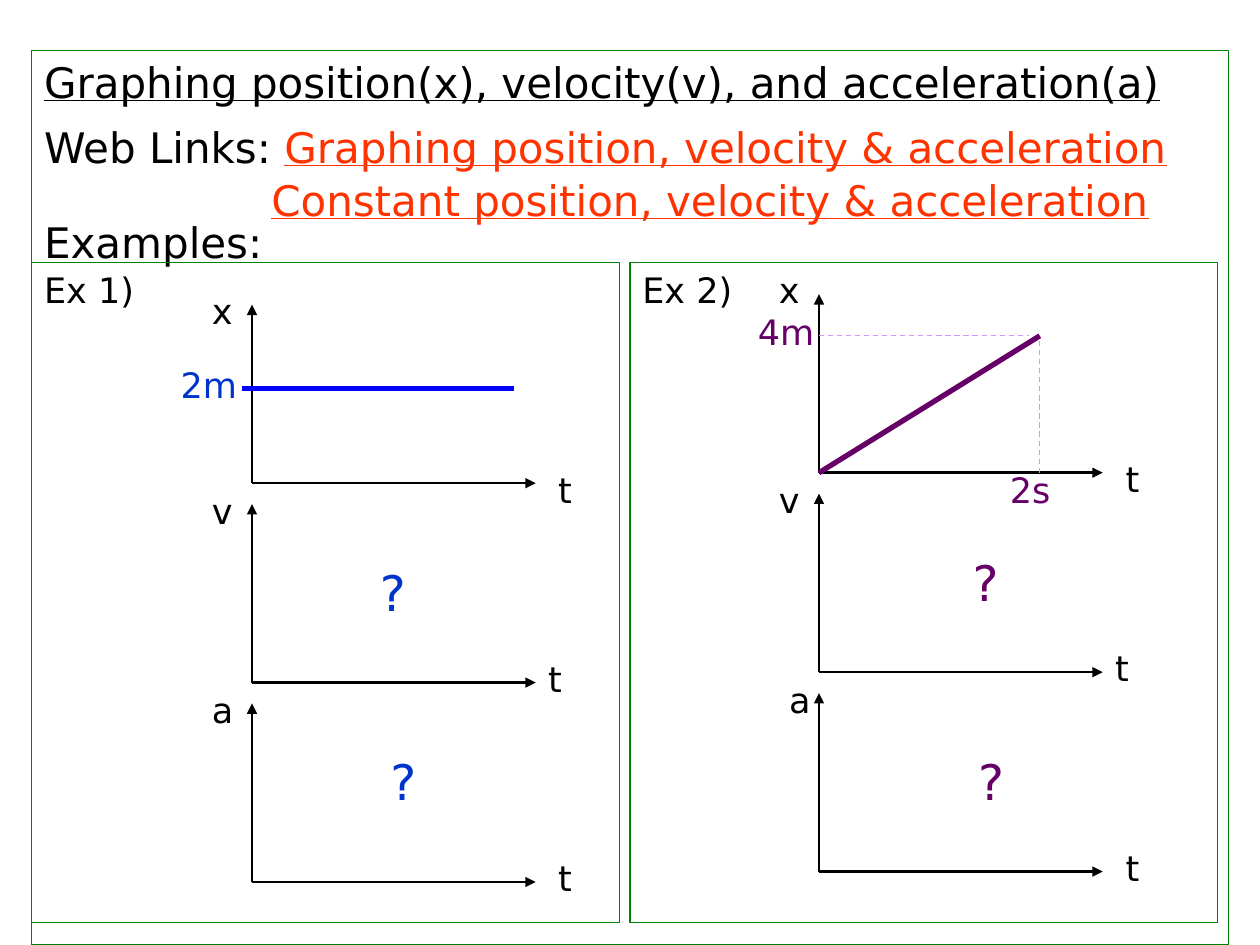
"""Build a slide on graphing position, velocity and acceleration."""
from lxml import etree
from pptx import Presentation
from pptx.dml.color import RGBColor
from pptx.enum.dml import MSO_LINE
from pptx.enum.shapes import MSO_CONNECTOR, MSO_SHAPE
from pptx.enum.text import MSO_ANCHOR, PP_ALIGN
from pptx.oxml.ns import qn
from pptx.util import Cm, Pt

STRAIGHT = MSO_CONNECTOR.STRAIGHT
RECTANGLE = MSO_SHAPE.RECTANGLE
DASH = MSO_LINE.DASH
TOP = MSO_ANCHOR.TOP
LEFT = PP_ALIGN.LEFT
COLORS = {
    "black": "000000", "frame": "008000", "link": "FF3300", "blue": "0033CC",
    "bright": "0000FF", "purple": "660066", "guide": "CC99FF",
}
AXIS_STEP, AXIS_HEIGHT, AXIS_WIDTH = 4.02, 3.6, 5.72


def add_text(shapes, place, spans, size=20, framed=False):
    lengths = [Cm(value) for value in place]
    if framed:
        box = shapes.add_shape(RECTANGLE, *lengths)
        box.shadow.inherit = False
        box.fill.background()
        box.line.color.rgb = RGBColor.from_string(COLORS["frame"])
        box.line.width = Pt(0.75)
    else:
        box = shapes.add_textbox(*lengths)
    frame = box.text_frame
    for name, value in {"word_wrap": True, "vertical_anchor": TOP}.items():
        setattr(frame, name, value)
    para = frame.paragraphs[0]
    para.alignment = LEFT
    for text, color, underline in spans:
        span = para.add_run()
        span.text = text
        span.font.color.rgb = RGBColor.from_string(COLORS[color])
        style = {"name": "DejaVu Sans", "size": Pt(size), "underline": underline}
        for name, value in style.items():
            setattr(span.font, name, value)
    return box


def add_line(shapes, ends, color, width, dash=None, arrow=False):
    line = shapes.add_connector(STRAIGHT, *[Cm(value) for value in ends])
    line.line.color.rgb = RGBColor.from_string(COLORS[color])
    line.line.width = Pt(width)
    if dash:
        line.line.dash_style = dash
    properties = line._element.spPr
    if arrow:
        outline = properties.find(qn("a:ln"))
        etree.SubElement(outline, qn("a:headEnd"), type="triangle")
    etree.SubElement(properties, qn("a:effectLst"))


deck = Presentation()
deck.slide_width, deck.slide_height = Cm(25.4), Cm(19.05)
page = deck.slides.add_slide(deck.slide_layouts[6])

title = "Graphing position(x), velocity(v), and acceleration(a)"
add_text(page.shapes, (0.64, 1.02, 24.13, 18.03), [(title, "black", True)], 24, True)

links = add_text(page.shapes, (0.64, 2.33, 24.33, 2.29), [
    ("Web Links: ", "black", False),
    ("Graphing position, velocity & acceleration", "link", True),
], 24)
para = links.text_frame.add_paragraph()
para._p.get_or_add_pPr().set("marL", str(Cm(4.58)))
for name, value in {"line_spacing": 0.5, "space_before": Pt(14)}.items():
    setattr(para, name, value)
span = para.add_run()
span.text = "Constant position, velocity & acceleration"
span.font.color.rgb = RGBColor.from_string(COLORS["link"])
for name, value in {"name": "DejaVu Sans", "size": Pt(24), "underline": True}.items():
    setattr(span.font, name, value)

add_text(page.shapes, (0.64, 4.23, 24.13, 1.27), [("Examples:", "black", False)], 24)

examples = [
    {
        "title": "Ex 1)", "left": 0.64, "origin": (5.08, 6.14), "color": "blue",
        "axis_labels": [
            ("t", 11, 9.31), ("t", 11, 17.15), ("t", 10.8, 13.12),
            ("x", 4.02, 5.72), ("a", 4.02, 13.76), ("v", 4.02, 9.74),
        ],
        "values": [("2m", 3.39, 7.2)],
        "questions": [(7.41, 11.22), (7.62, 15.03)],
        "lines": [
            ((4.87, 7.83, 5.51, 7.83), "bright", 3),
            ((5.29, 7.83, 10.37, 7.83), "bright", 3),
        ],
    },
    {
        "title": "Ex 2)", "left": 12.7, "origin": (16.51, 5.93), "color": "purple",
        "axis_labels": [
            ("t", 22.44, 9.1), ("t", 22.44, 16.93), ("t", 22.23, 12.91),
            ("x", 15.45, 5.29), ("a", 15.66, 13.55), ("v", 15.45, 9.53),
        ],
        "values": [("4m", 15.03, 6.14), ("2s", 20.11, 9.31)],
        "questions": [(19.36, 11.01), (19.47, 15.03)],
        "lines": [
            ((16.51, 6.77, 20.75, 6.77), "guide", 0.75, DASH),
            ((20.96, 9.53, 20.96, 6.77), "guide", 0.75, DASH),
            ((16.51, 9.53, 20.96, 6.77), "purple", 3),
        ],
    },
]

for example in examples:
    shapes = page.shapes.add_group_shape().shapes
    color = example["color"]
    heading = [(example["title"], "black", False)]
    add_text(shapes, (example["left"], 5.29, 11.85, 13.31), heading, framed=True)
    left, first_top = example["origin"]
    for row in range(3):
        top = first_top + row * AXIS_STEP
        base = top + AXIS_HEIGHT
        add_line(shapes, (left, top, left, base), "black", 1.5, arrow=True)
        add_line(shapes, (left + AXIS_WIDTH, base, left, base), "black", 1.5, arrow=True)
    for text, x, y in example["axis_labels"]:
        add_text(shapes, (x, y, 1.27, 1.1), [(text, "black", False)])
    for text, x, y in example["values"]:
        add_text(shapes, (x, y, 2.54, 1.1), [(text, color, False)])
    for line in example["lines"]:
        add_line(shapes, *line)
    for x, y in example["questions"]:
        add_text(shapes, (x, y, 2.33, 1.44), [("?", color, False)], 28)

deck.save("out.pptx")
